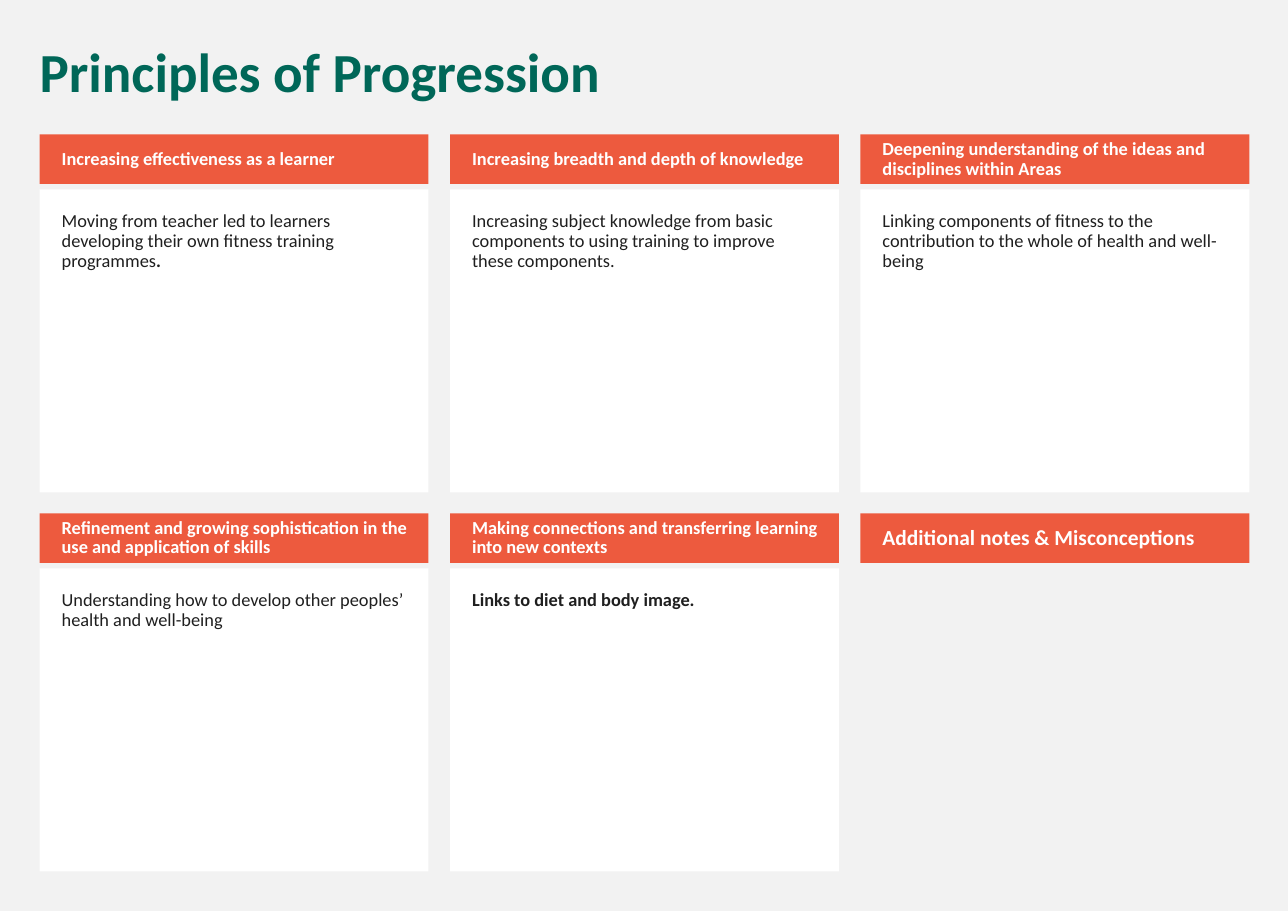
from pptx import Presentation
from pptx.dml.color import RGBColor
from pptx.enum.shapes import MSO_SHAPE
from pptx.enum.text import MSO_ANCHOR, MSO_AUTO_SIZE, PP_ALIGN
from pptx.util import Inches, Pt

COLORS = {
    "background": "F2F2F2",
    "title": "006758",
    "heading": "ED5A3E",
    "panel": "FFFFFF",
    "heading_text": "FFFFFF",
    "panel_text": "1F1F1F",
}
FONT = "Calibri"
FIRST_LEFT, LAST_LEFT = 0.36, 7.81
FIRST_TOP, ROW_PITCH = 1.22, 3.44
CARD_WIDTH, HEADING_HEIGHT = 3.53, 0.45
PANEL_OFFSET, PANEL_HEIGHT = 0.5, 2.75
COLUMNS = 3

PRINCIPLES = [
    ("Increasing effectiveness as a learner", 12,
     [("Moving from teacher led to learners developing their own fitness training programmes", False),
      (".", True)]),
    ("Increasing breadth and depth of knowledge", 12,
     [("Increasing subject knowledge from basic components to using training "
       "to improve these components.", False)]),
    ("Deepening understanding of the ideas and disciplines within Areas", 12,
     [("Linking components of fitness to the contribution to the whole of health and well-being", False)]),
    ("Refinement and growing sophistication in the use and application of skills", 12,
     [("Understanding how to develop other peoples’ health and well-being", False)]),
    ("Making connections and transferring learning into new contexts", 12,
     [("Links to diet and body image.", True)]),
    ("Additional notes & Misconceptions", 14, []),
]


def color(name):
    return RGBColor.from_string(COLORS[name])


def write_text(frame, runs, size, color_name, anchor, insets):
    frame.word_wrap = True
    frame.auto_size = MSO_AUTO_SIZE.NONE
    frame.vertical_anchor = anchor
    (frame.margin_left, frame.margin_top,
     frame.margin_right, frame.margin_bottom) = map(Inches, insets)
    paragraph = frame.paragraphs[0]
    paragraph.alignment = PP_ALIGN.LEFT
    paragraph.line_spacing = 0.9
    paragraph.space_before = Pt(11)
    paragraph.font.name = FONT
    paragraph.font.size = Pt(size)
    paragraph.font.color.rgb = color(color_name)
    for text, bold in runs:
        run = paragraph.add_run()
        run.text = text
        run.font.bold = bold


def add_box(slide, left, top, height, fill_name):
    box = slide.shapes.add_shape(MSO_SHAPE.RECTANGLE, Inches(left), Inches(top),
                                 Inches(CARD_WIDTH), Inches(height))
    box.shadow.inherit = False
    box.fill.solid()
    box.fill.fore_color.rgb = color(fill_name)
    box.line.fill.background()
    return box.text_frame


def add_title(slide, text):
    title = slide.shapes.title
    title.left, title.top = Inches(0.26), Inches(0.36)
    title.width, title.height = Inches(11.08), Inches(0.65)
    write_text(title.text_frame, [(text, True)], 36, "title",
               MSO_ANCHOR.TOP, (0.1, 0.05, 0.1, 0.05))


def add_card(slide, left, top, heading, heading_size, body):
    if body:
        panel = add_box(slide, left, top + PANEL_OFFSET, PANEL_HEIGHT, "panel")
        write_text(panel, body, 12, "panel_text", MSO_ANCHOR.TOP, (0.2, 0.2, 0.2, 0.2))
    banner = add_box(slide, left, top, HEADING_HEIGHT, "heading")
    write_text(banner, [(heading, True)], heading_size, "heading_text",
               MSO_ANCHOR.MIDDLE, (0.2, 0.05, 0.1, 0.05))


def main():
    presentation = Presentation()
    presentation.slide_width, presentation.slide_height = Inches(11.69), Inches(8.27)
    slide = presentation.slides.add_slide(presentation.slide_layouts[5])
    slide.background.fill.solid()
    slide.background.fill.fore_color.rgb = color("background")
    add_title(slide, "Principles of Progression")
    column_pitch = (LAST_LEFT - FIRST_LEFT) / (COLUMNS - 1)
    for index, (heading, heading_size, body) in enumerate(PRINCIPLES):
        row, column = divmod(index, COLUMNS)
        add_card(slide, FIRST_LEFT + column * column_pitch, FIRST_TOP + row * ROW_PITCH,
                 heading, heading_size, body)
    presentation.save("out.pptx")


if __name__ == "__main__":
    main()
